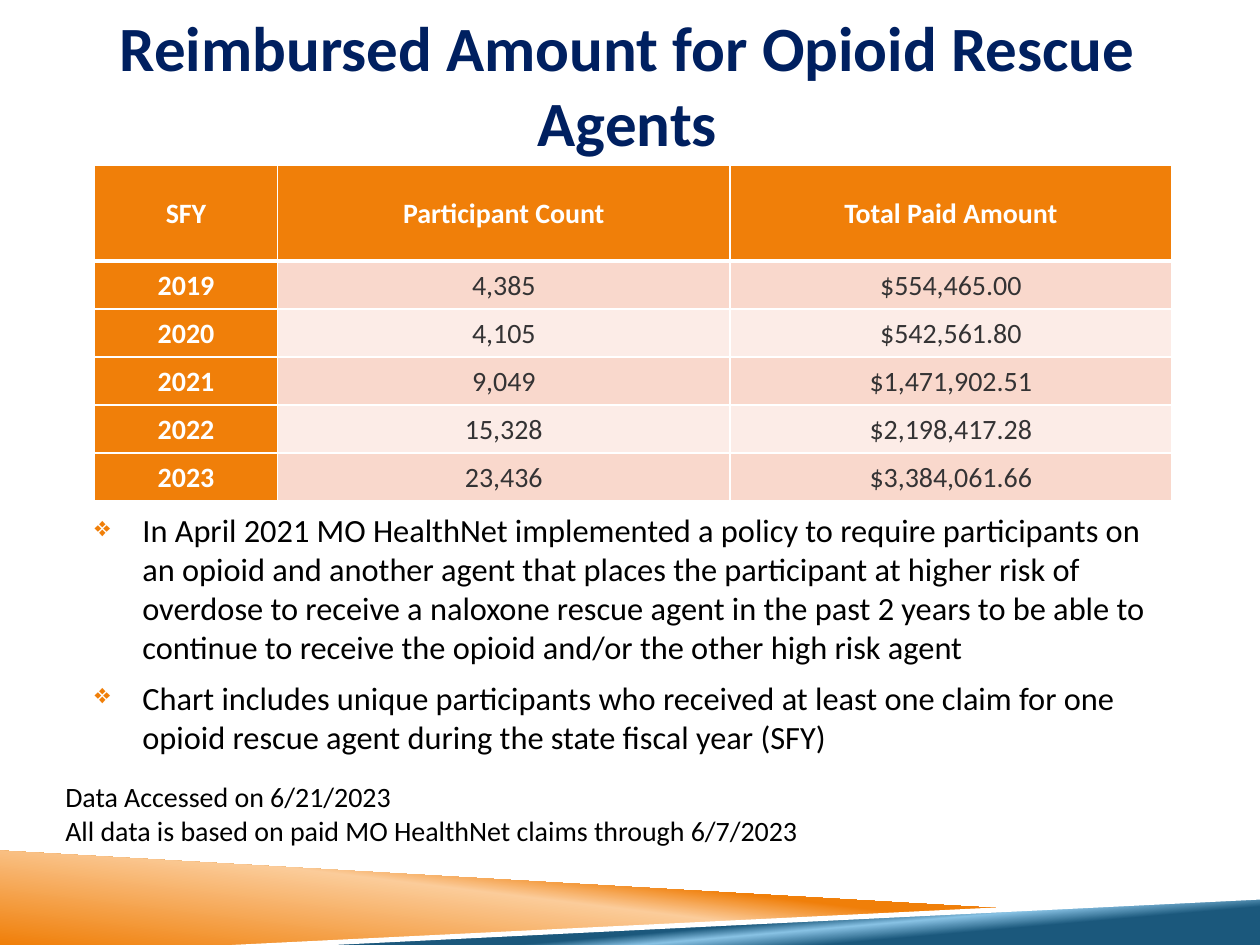
from lxml import etree
from copy import deepcopy
from pptx import Presentation
from pptx import util as u
from pptx.dml.color import RGBColor
from pptx.enum import text
from pptx.oxml.ns import qn

COLUMNS, ROWS = 100, 75
UNIT = u.Inches(0.1)
COLORS = {
    "orange": "F07F09", "peach": "FBCC9A", "navy": "002060",
    "blue": "1B587C", "sky": "89C3E5", "white": "FFFFFF",
    "black": "000000", "ink": "343334", "band": "F9D8CC", "pale": "FCECE7",
}
MARGINS = ("margin_left", "margin_top", "margin_right", "margin_bottom")
FLUSH = dict(zip(MARGINS, (0, u.Inches(0.05)) * 2))
CELL = dict(zip(MARGINS, (u.Inches(0.07), 0) * 2),
            vertical_anchor=text.MSO_ANCHOR.MIDDLE)
CENTER = {"alignment": text.PP_ALIGN.CENTER}

TITLE = "Reimbursed Amount for Opioid Rescue Agents"
HEADINGS = ("SFY", "Participant Count", "Total Paid Amount")
CLAIMS = (
    ("2019", "4,385", "$554,465.00"),
    ("2020", "4,105", "$542,561.80"),
    ("2021", "9,049", "$1,471,902.51"),
    ("2022", "15,328", "$2,198,417.28"),
    ("2023", "23,436", "$3,384,061.66"),
)
POLICY_NOTES = (
    "In April 2021 MO HealthNet implemented a policy to require participants on "
    "an opioid and another agent that places the participant at higher risk of "
    "overdose to receive a naloxone rescue agent in the past 2 years to be able to "
    "continue to receive the opioid and/or the other high risk agent",
    "Chart includes unique participants who received at least one claim for one "
    "opioid rescue agent during the state fiscal year (SFY)",
)
SOURCES = (
    "Data Accessed on 6/21/2023",
    "All data is based on paid MO HealthNet claims through 6/7/2023",
)
SWOOSHES = (
    ((0, 67.5, 79.2, 7.5), ((0, 0), (1, 0.61), (0.25, 1), (0, 1)),
     ((0, "orange"), (0.52, "peach"), (0.66, "orange")), 83),
    ((19.8, 71.2, 80.2, 3.8), ((0, 1), (1, 0), (1, 1)),
     ((0.28, "blue"), (0.4, "sky"), (0.48, "blue")), 95),
    ((18.4, 71, 81.6, 4), ((1, 0), (0, 1), (0.1, 1), (1, 0.1)),
     ((0, "white"),), 0),
)


def rgb(name):
    return RGBColor.from_string(COLORS[name])


def emu(box):
    return [round(part * UNIT) for part in box]


def apply(target, formats):
    for name, value in formats.items():
        setattr(target, name, value)


def write(paragraph, words, size, color, bold=False, **layout):
    paragraph.text = words
    apply(paragraph, layout)
    apply(paragraph.font, {"name": "Calibri", "size": u.Pt(size), "bold": bold})
    paragraph.font.color.rgb = rgb(color)


def add_frame(slide, box, **formats):
    frame = slide.shapes.add_textbox(*emu(box)).text_frame
    apply(frame, {"word_wrap": True, **formats})
    return frame


def next_paragraph(frame, index):
    return frame.add_paragraph() if index else frame.paragraphs[0]


def add_swoosh(slide, box, corners, stops, angle):
    left, top, width, height = emu(box)
    outline = [(left + x * width, top + y * height) for x, y in corners]
    builder = slide.shapes.build_freeform(*outline[0], scale=1.0)
    builder.add_line_segments(outline[1:], close=True)
    swoosh = builder.convert_to_shape()
    swoosh.shadow.inherit = False
    swoosh.line.fill.background()
    if len(stops) == 1:
        swoosh.fill.solid()
        swoosh.fill.fore_color.rgb = rgb(stops[0][1])
        return
    swoosh.fill.gradient()
    swoosh.fill.gradient_angle = angle
    stop_list = swoosh._element.spPr.find(qn("a:gradFill")).find(qn("a:gsLst"))
    stop_list.append(deepcopy(stop_list[0]))
    for stop, (position, color) in zip(swoosh.fill.gradient_stops, stops):
        stop.position = position
        stop.color.rgb = rgb(color)


def add_title(slide, box):
    frame = add_frame(slide, box, vertical_anchor=text.MSO_ANCHOR.MIDDLE, **FLUSH)
    write(frame.paragraphs[0], TITLE, 36, "navy", True, **CENTER)


def add_borders(cell, widths):
    properties = cell._tc.get_or_add_tcPr()
    for index, (side, width) in enumerate(widths.items()):
        line = etree.Element(qn(f"a:ln{side}"), w=str(u.Pt(width)))
        fill = etree.SubElement(line, qn("a:solidFill"))
        etree.SubElement(fill, qn("a:srgbClr"), val=COLORS["white"])
        properties.insert(index, line)


def add_claims_table(slide, box):
    records = (HEADINGS, *CLAIMS)
    left, top, width, height = emu(box)
    table = slide.shapes.add_table(
        len(records), len(HEADINGS), left, top, width, height).table
    for column, share in zip(table.columns, (0.17, 0.42, 0.41)):
        column.width = round(width * share)
    row_height = height / (len(records) + 1)
    for r, record in enumerate(records):
        table.rows[r].height = round(row_height * (1 if r else 2))
        for c, words in enumerate(record):
            cell = table.cell(r, c)
            heading = r == 0 or c == 0
            apply(cell, CELL)
            cell.fill.solid()
            cell.fill.fore_color.rgb = rgb(
                "orange" if heading else "band" if r % 2 else "pale")
            write(cell.text_frame.paragraphs[0], words, 16,
                  "white" if heading else "ink", heading,
                  line_spacing=1.07, **CENTER)
            add_borders(cell, {"L": 1, "R": 1, "T": 3 if r == 1 else 1,
                               "B": 1 if r else 3})


def add_bullet(paragraph):
    indent = u.Inches(0.38)
    properties = paragraph._p.get_or_add_pPr()
    properties.set("marL", str(indent))
    properties.set("indent", str(-indent))
    color = etree.SubElement(properties, qn("a:buClr"))
    etree.SubElement(color, qn("a:srgbClr"), val=COLORS["orange"])
    etree.SubElement(properties, qn("a:buSzPct"), val="85000")
    etree.SubElement(properties, qn("a:buChar"), char="❖")


def add_policy_notes(slide, box):
    frame = add_frame(slide, box, **FLUSH)
    for index, note in enumerate(POLICY_NOTES):
        paragraph = next_paragraph(frame, index)
        add_bullet(paragraph)
        write(paragraph, note, 18.5, "black", space_before=u.Pt(7 if index else 0))


def add_sources(slide, box):
    frame = add_frame(slide, box)
    for index, source in enumerate(SOURCES):
        write(next_paragraph(frame, index), source, 16, "black")


def main():
    deck = Presentation()
    deck.slide_width, deck.slide_height = COLUMNS * UNIT, ROWS * UNIT
    slide = deck.slides.add_slide(deck.slide_layouts[6])
    for swoosh in SWOOSHES:
        add_swoosh(slide, *swoosh)
    add_title(slide, (6.7, 3.3, 86.2, 6.7))
    add_claims_table(slide, (7.5, 13.1, 85.5, 26.7))
    add_sources(slide, (4.2, 61.4, 68.4, 6.4))
    add_policy_notes(slide, (7.5, 40, 85.5, 21.2))
    deck.save("out.pptx")


if __name__ == "__main__":
    main()
